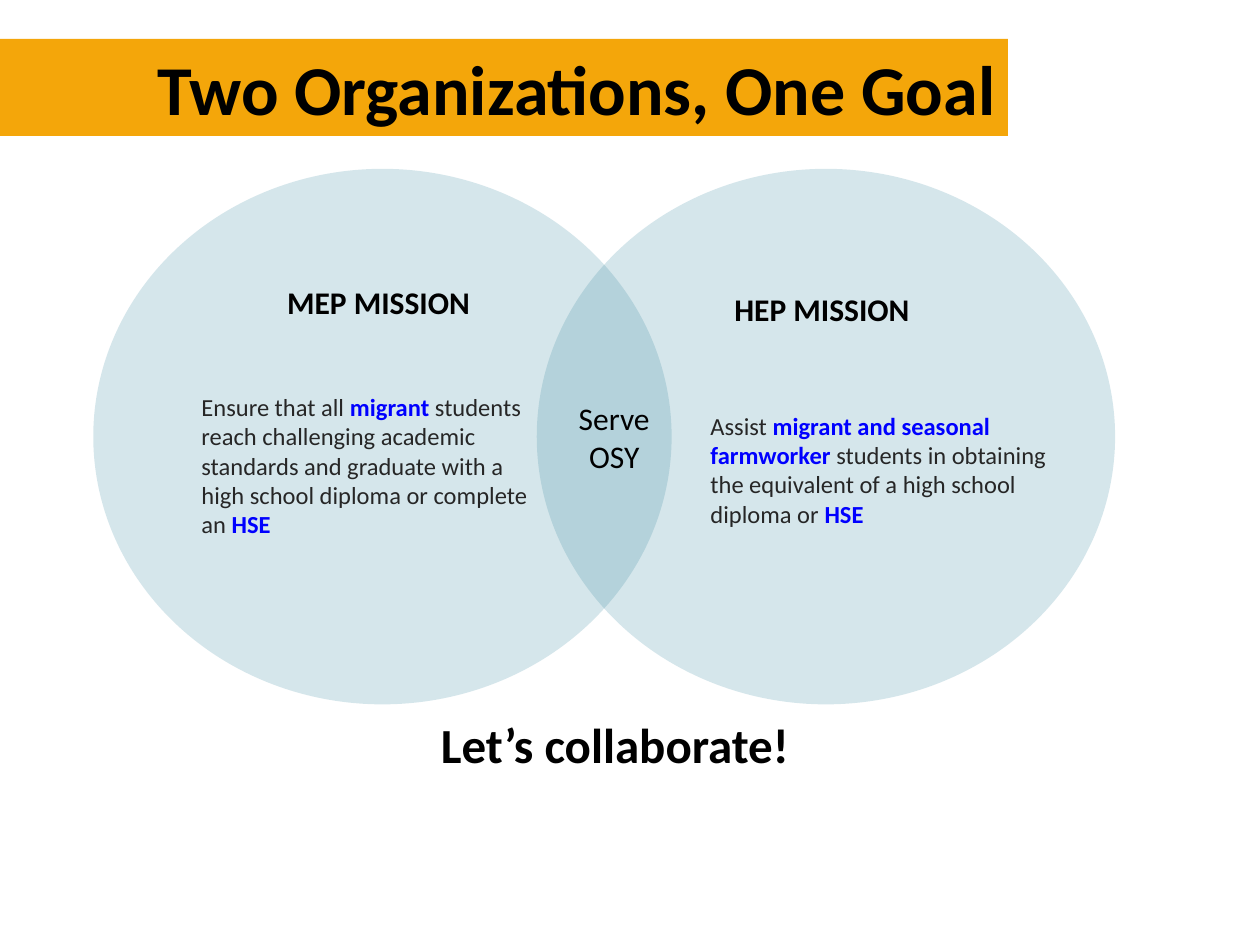
from lxml import etree
from pptx import Presentation
from pptx.dml.color import RGBColor
from pptx.enum.shapes import MSO_SHAPE
from pptx.enum.text import MSO_ANCHOR, PP_ALIGN
from pptx.oxml.ns import qn
from pptx.util import Inches, Pt

OVAL, RECTANGLE = MSO_SHAPE.OVAL, MSO_SHAPE.RECTANGLE
LEFT, CENTER, RIGHT = PP_ALIGN.LEFT, PP_ALIGN.CENTER, PP_ALIGN.RIGHT
TOP, MIDDLE = MSO_ANCHOR.TOP, MSO_ANCHOR.MIDDLE

FONT = "Calibri"
COLORS = {
    "circle": "31859C",
    "banner": "F4A60A",
    "heading": "000000",
    "body": "262626",
    "emphasis": "0000FF",
}


def color(name):
    return RGBColor.from_string(COLORS[name])


def add_filled_shape(slide, kind, box, fill, opacity=100):
    shape = slide.shapes.add_shape(kind, *map(Inches, box))
    shape.shadow.inherit = False
    shape.line.fill.background()
    shape.fill.solid()
    shape.fill.fore_color.rgb = color(fill)
    if opacity < 100:
        rgb_element = shape.fill._xPr.find(".//" + qn("a:srgbClr"))
        alpha = etree.SubElement(rgb_element, qn("a:alpha"))
        alpha.set("val", str(opacity * 1000))
    return shape


def write_text(shape, paragraphs, size, align=LEFT, anchor=TOP, wrap=True):
    """Each paragraph is a list of (text, color name, bold) runs."""
    frame = shape.text_frame
    frame.word_wrap = wrap
    frame.vertical_anchor = anchor
    for index, runs in enumerate(paragraphs):
        paragraph = frame.add_paragraph() if index else frame.paragraphs[0]
        paragraph.alignment = align
        for text, color_name, bold in runs:
            run = paragraph.add_run()
            run.text = text
            run.font.name = FONT
            run.font.size = Pt(size)
            run.font.bold = bold
            run.font.color.rgb = color(color_name)


def add_text(slide, box, paragraphs, size, align=LEFT, wrap=True):
    text_box = slide.shapes.add_textbox(*map(Inches, box))
    write_text(text_box, paragraphs, size, align, wrap=wrap)


def heading(text, bold=True):
    return [(text, "heading", bold)]


def body(text):
    return (text, "body", False)


def emphasis(text):
    return (text, "emphasis", True)


def main():
    presentation = Presentation()
    presentation.slide_width = Inches(10)
    presentation.slide_height = Inches(7.5)
    slide = presentation.slides.add_slide(presentation.slide_layouts[6])

    # Overlapping circles
    for left in (4.26, 0.74):
        add_filled_shape(slide, OVAL, (left, 1.34, 4.59, 4.25), "circle", 20)

    # Title banner
    banner = add_filled_shape(slide, RECTANGLE, (0, 0.31, 8, 0.77), "banner")
    write_text(banner, [heading("Two Organizations, One Goal")], 40, RIGHT, MIDDLE)

    # Mission headings
    add_text(slide, (5.73, 2.25, 1.66, 0.4), [heading("HEP MISSION")], 18)
    add_text(slide, (2.18, 2.2, 1.67, 0.4), [heading("MEP MISSION")], 18, wrap=False)

    # Mission statements
    mep_mission = [
        [body("Ensure that all "), emphasis("migrant "), body("students")],
        [
            body("reach challenging academic standards and graduate with a "
                 "high school diploma or complete an "),
            emphasis("HSE"),
        ],
    ]
    hep_mission = [[
        body("Assist "),
        emphasis("migrant and seasonal farmworker "),
        body("students in obtaining the equivalent of a high school diploma or "),
        emphasis("HSE"),
    ]]
    add_text(slide, (1.5, 3.06, 2.92, 1.51), mep_mission, 14)
    add_text(slide, (5.54, 3.21, 2.96, 1.04), hep_mission, 14)

    # Shared goal and call to action
    shared_goal = [heading("Serve", False), heading("OSY", False)]
    add_text(slide, (4.49, 3.12, 0.77, 0.71), shared_goal, 18, CENTER, wrap=False)
    add_text(slide, (3.38, 5.62, 3, 0.57), [heading("Let’s collaborate!")], 28,
             CENTER, wrap=False)

    presentation.save("out.pptx")


if __name__ == "__main__":
    main()
